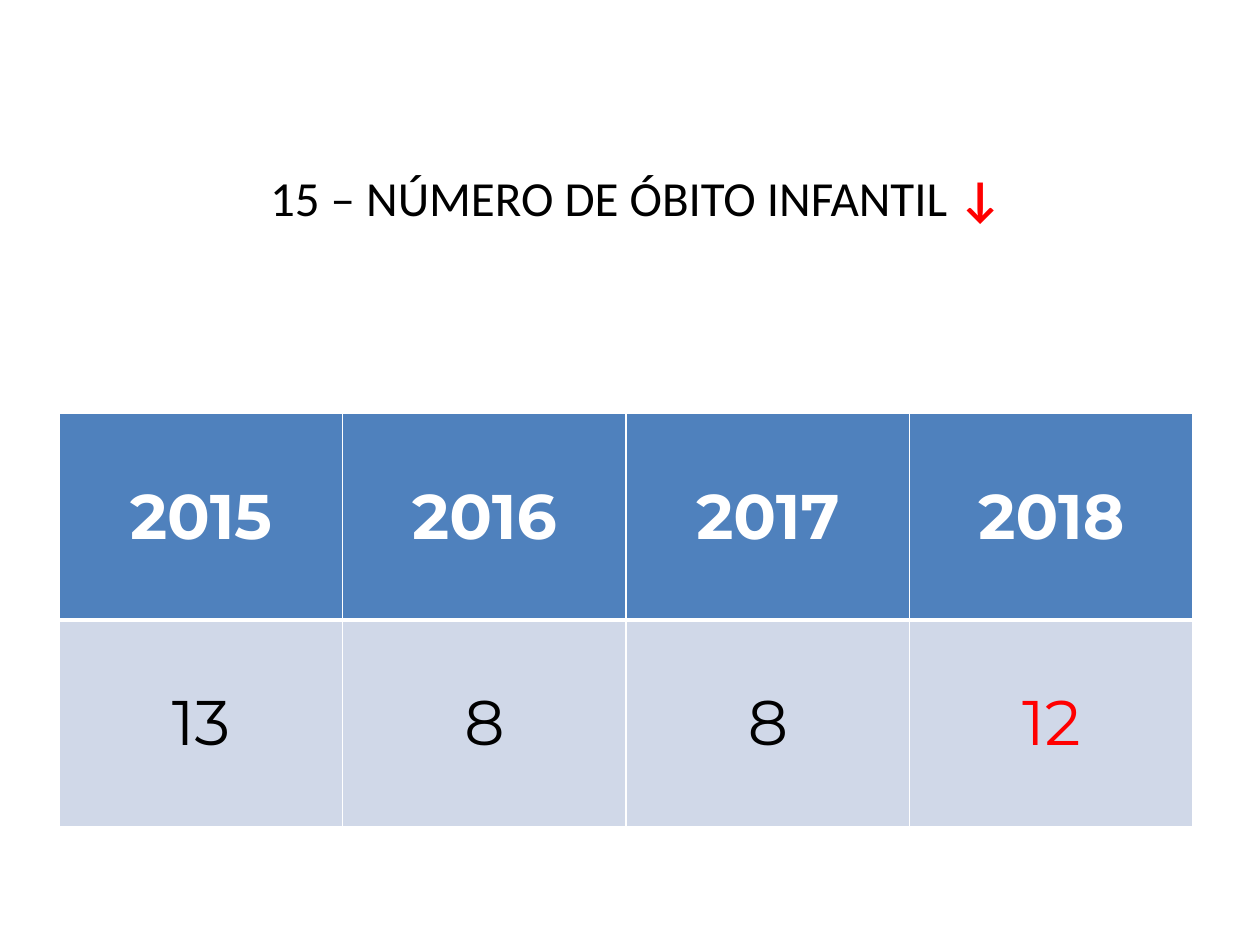
from dataclasses import dataclass

from lxml.etree import SubElement
from pptx import Presentation
from pptx.dml.color import RGBColor
from pptx.enum.text import MSO_ANCHOR, PP_ALIGN
from pptx.oxml.ns import qn
from pptx.util import Inches, Pt


@dataclass
class Run:
    text: str
    size: int
    font: str
    color: str = "000000"
    bold: bool = False


@dataclass
class Row:
    runs: list[Run]
    fill: str
    edges: dict[str, int]


FACE = "Montserrat"
YEARS = [Run(year, 36, FACE, "FFFFFF", True) for year in ("2015", "2016", "2017", "2018")]
DEATHS = [Run(count, 36, FACE) for count in ("13", "8", "8")] + [Run("12", 36, FACE, "FF0000")]
ROWS = [
    Row(YEARS, "4F81BD", {"lnL": 1, "lnR": 1, "lnT": 1, "lnB": 3}),
    Row(DEATHS, "D0D8E8", {"lnL": 1, "lnR": 1, "lnT": 3, "lnB": 1}),
]
TITLE = [
    Run("15 – NÚMERO DE ÓBITO INFANTIL ", 28, "Calibri"),
    Run("↓", 28, "Calibri", "FF0000", True),
]


def paint(target, color: str) -> None:
    target.rgb = RGBColor.from_string(color)


def write(frame, runs: list[Run]) -> None:
    para = frame.paragraphs[0]
    para.alignment = PP_ALIGN.CENTER
    for item in runs:
        run = para.add_run()
        run.text = item.text
        run.font.size = Pt(item.size)
        run.font.name = item.font
        run.font.bold = item.bold
        paint(run.font.color, item.color)


def border(cell, edges: dict[str, int]) -> None:
    props = cell._tc.get_or_add_tcPr()
    for side, width in edges.items():
        line = SubElement(props, qn(f"a:{side}"), w=str(Pt(width)))
        fill = SubElement(line, qn("a:solidFill"))
        SubElement(fill, qn("a:srgbClr"), val="FFFFFF")


def add_title(slide) -> None:
    box = slide.shapes.add_textbox(Inches(0.55), Inches(0.16), Inches(9), Inches(2.81))
    frame = box.text_frame
    frame.word_wrap = True
    frame.vertical_anchor = MSO_ANCHOR.MIDDLE
    write(frame, TITLE)


def add_grid(slide) -> None:
    shape = slide.shapes.add_table(
        len(ROWS), len(YEARS), Inches(0.47), Inches(3.28), Inches(9), Inches(3.28)
    )
    for line, row in zip(shape.table.rows, ROWS):
        for cell, run in zip(line.cells, row.runs):
            border(cell, row.edges)
            cell.fill.solid()
            paint(cell.fill.fore_color, row.fill)
            cell.vertical_anchor = MSO_ANCHOR.MIDDLE
            write(cell.text_frame, [run])


def main() -> None:
    """Build the slide on infant deaths by year."""
    deck = Presentation()
    deck.slide_width, deck.slide_height = Inches(10), Inches(7.5)
    slide = deck.slides.add_slide(deck.slide_layouts[6])
    add_title(slide)
    add_grid(slide)
    deck.save("out.pptx")


if __name__ == "__main__":
    main()
